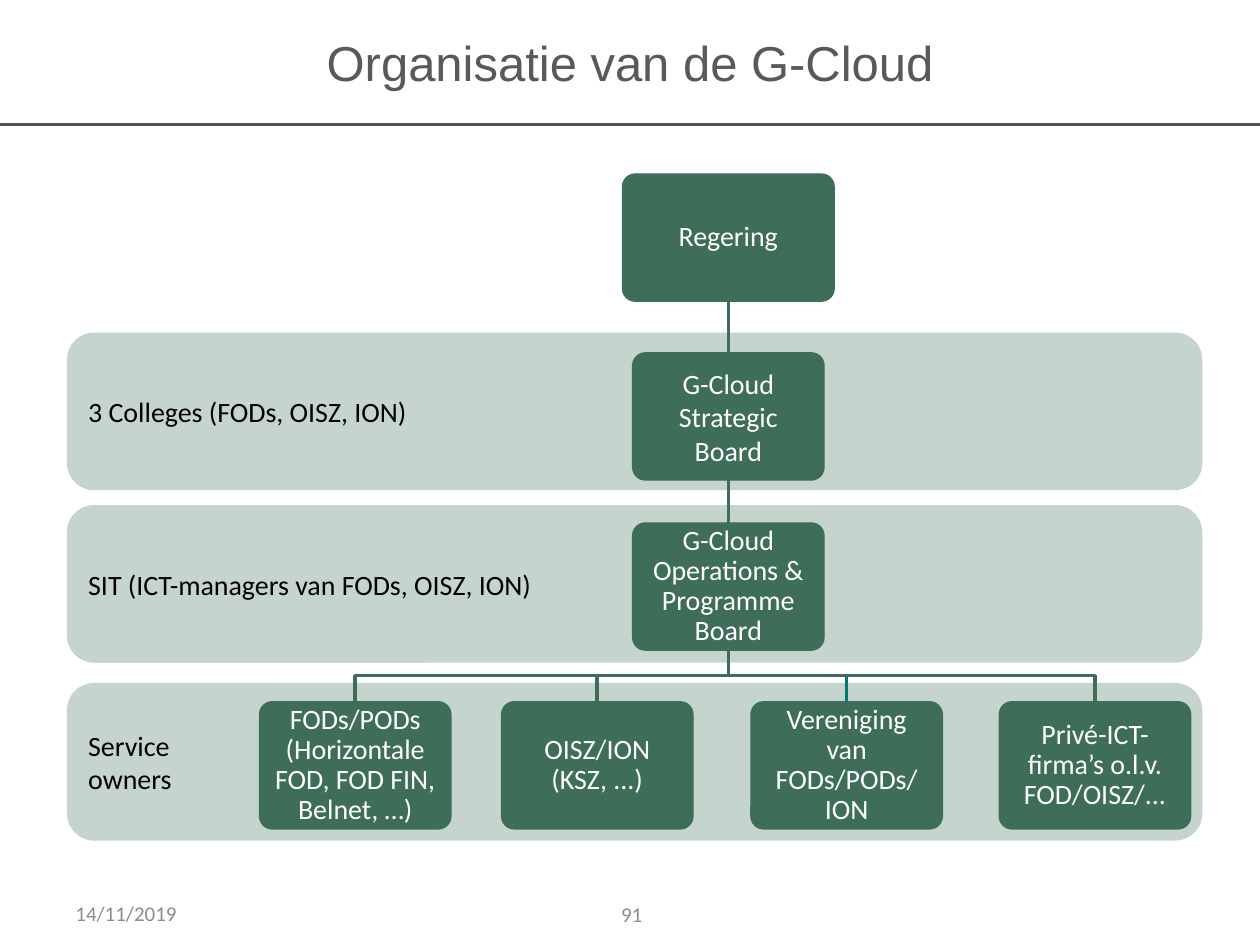
"""Build the G-Cloud organisation slide."""
from dataclasses import dataclass

from lxml import etree
from pptx import Presentation
from pptx import util as u
from pptx.dml.color import RGBColor
from pptx.enum import shapes as es, text as et
from pptx.oxml.ns import qn


@dataclass(frozen=True)
class Theme:
    head: str = "Arial"
    body: str = "Calibri"
    title: float = 28
    label: float = 16
    small: float = 12
    grey: str = "595959"
    rule: str = "525252"
    foot: str = "8C8C8C"
    band: str = "C6D4CE"
    green: str = "3E6E5A"
    teal: str = "087670"
    black: str = "000000"
    white: str = "FFFFFF"


@dataclass(frozen=True)
class Band:
    top: float
    paras: tuple[str, ...]


@dataclass(frozen=True)
class Node:
    mid: float
    top: float
    words: str
    width: float = 109.4
    lead: float = 0.9
    wire: str = Theme.green


T = Theme()
SPINE = 416.2
HIGH = 72.7
FORK = 386.1
LEAF = 401
BANDS = (
    Band(190.8, ("3 Colleges (FODs, OISZ, ION)",)),
    Band(289.4, ("SIT (ICT-managers van FODs, OISZ, ION)",)),
    Band(391, ("Service", "owners")),
)
CHAIN = (
    Node(SPINE, 99.4, "Regering", width=121),
    Node(SPINE, 201.6, "G-Cloud Strategic Board", lead=1.0),
    Node(SPINE, 298.8, "G-Cloud Operations & Programme Board"),
)
LEAVES = (
    Node(203, LEAF, "FODs/PODs\n(Horizontale FOD, FOD FIN, Belnet, …)"),
    Node(341.3, LEAF, "OISZ/ION (KSZ, ...)"),
    Node(483.8, LEAF, "Vereniging van FODs/PODs/ ION", wire=T.teal),
    Node(625.7, LEAF, "Privé-ICT-firma’s o.l.v. FOD/OISZ/..."),
)


def tint(code: str) -> RGBColor:
    """Turn a hex code into a colour."""
    return RGBColor.from_string(code)


def write(shape, paras: tuple[str, ...], size: float, color: str, font: str = T.body,
          center: bool = False, lead: float = 1.0) -> None:
    """Fill a shape with middle-anchored text, run by run."""
    frame = shape.text_frame
    frame.word_wrap = True
    frame.vertical_anchor = et.MSO_ANCHOR.MIDDLE
    for i, words in enumerate(paras):
        para = frame.add_paragraph() if i else frame.paragraphs[0]
        para.alignment = et.PP_ALIGN.CENTER if center else et.PP_ALIGN.LEFT
        para.line_spacing = lead
        for j, part in enumerate(words.split("\n")):
            if j:
                para.add_line_break()
            run = para.add_run()
            run.text = part
            run.font.name = font
            run.font.size = u.Pt(size)
            run.font.color.rgb = tint(color)


def label(slide, box: tuple[float, ...], words: str, size: float, color: str,
          font: str = T.body, center: bool = False) -> None:
    """Add a plain text box."""
    shape = slide.shapes.add_textbox(*map(u.Pt, box))
    write(shape, (words,), size, color, font, center)


def panel(slide, box: tuple[float, ...], color: str, edge: float):
    """Add a rounded box in one colour."""
    shape = slide.shapes.add_shape(es.MSO_SHAPE.ROUNDED_RECTANGLE, *map(u.Pt, box))
    shape.shadow.inherit = False
    shape.fill.solid()
    shape.fill.fore_color.rgb = tint(color)
    shape.line.color.rgb = tint(color)
    shape.line.width = u.Pt(edge)
    return shape


def card(slide, node: Node):
    """Add one box of the chart."""
    box = (node.mid - node.width / 2, node.top, node.width, HIGH)
    shape = panel(slide, box, T.green, 0.75)
    shape.adjustments[0] = 0.1
    frame = shape.text_frame
    frame.margin_left = frame.margin_right = u.Pt(5)
    frame.margin_top = frame.margin_bottom = u.Pt(5)
    write(shape, (node.words,), T.label, T.white, center=True, lead=node.lead)
    return shape


def line(slide, ends: tuple[float, ...], color: str, width: float):
    """Add a straight line without a shadow."""
    link = slide.shapes.add_connector(es.MSO_CONNECTOR.STRAIGHT, *map(u.Pt, ends))
    link.line.color.rgb = tint(color)
    link.line.width = u.Pt(width)
    etree.SubElement(link._element.spPr, qn("a:effectLst"))
    return link


def branch(slide, root: Node, leaf: Node) -> None:
    """Draw the bent line from a box down to a leaf."""
    foot = u.Pt(root.top + HIGH)
    pen = slide.shapes.build_freeform(u.Pt(root.mid), foot, scale=1.0)
    bends = ((root.mid, FORK), (leaf.mid, FORK), (leaf.mid, leaf.top))
    pen.add_line_segments([(u.Pt(x), u.Pt(y)) for x, y in bends], close=False)
    shape = pen.convert_to_shape()
    shape.shadow.inherit = False
    shape.fill.background()
    shape.line.color.rgb = tint(leaf.wire)
    shape.line.width = u.Pt(2)


def main() -> None:
    """Draw the slide and save it."""
    deck = Presentation()
    deck.slide_width, deck.slide_height = u.Pt(720), u.Pt(540)
    slide = deck.slides.add_slide(deck.slide_layouts[6])
    line(slide, (0, 71.3, 720, 71.3), T.rule, 1.5)
    label(slide, (0, 0, 720, 71.3), "Organisatie van de G-Cloud",
          T.title, T.grey, T.head, center=True)
    for band in BANDS:
        shape = panel(slide, (39, band.top, 647.3, 88.6), T.band, 1.5)
        write(shape, band.paras, T.label, T.black)
    cards = [card(slide, node) for node in CHAIN]
    for i, (above, below) in enumerate(zip(cards, cards[1:])):
        ends = (SPINE, CHAIN[i].top + HIGH, SPINE, CHAIN[i + 1].top)
        link = line(slide, ends, T.green, 2)
        link.begin_connect(above, 2)
        link.end_connect(below, 0)
    for leaf in LEAVES:
        branch(slide, CHAIN[-1], leaf)
        card(slide, leaf)
    label(slide, (36, 507.6, 168, 28.8), "14/11/2019", T.small, T.foot)
    label(slide, (277, 508, 168, 28.8), "91", T.small, T.foot, center=True)
    deck.save("out.pptx")


if __name__ == "__main__":
    main()
